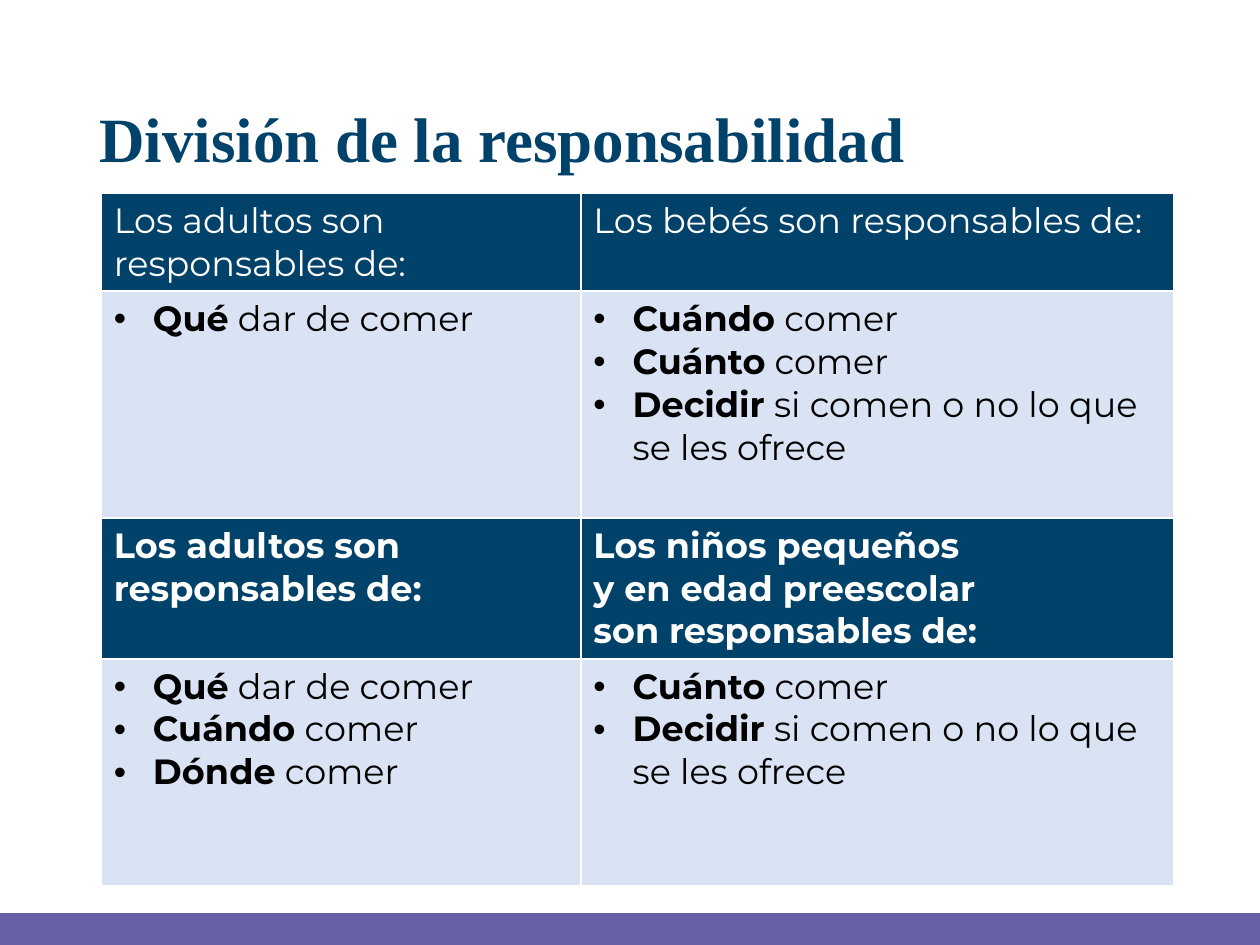
from lxml.etree import SubElement
from pptx import Presentation
from pptx.dml.color import RGBColor
from pptx.enum.shapes import MSO_SHAPE as Shape
from pptx.enum.text import MSO_ANCHOR as Anchor
from pptx.oxml import parse_xml
from pptx.oxml.ns import nsdecls, qn
from pptx.util import Cm, Pt

NAVY = RGBColor(0x00, 0x42, 0x6A)
PALE = RGBColor(0xDA, 0xE3, 0xF3)
PURPLE = RGBColor(0x66, 0x60, 0xA6)
WHITE = RGBColor(0xFF, 0xFF, 0xFF)
BLACK = RGBColor(0x00, 0x00, 0x00)

ADULTS = "Los adultos son\nresponsables de:"
WHAT = ("Qué", " dar de comer")
WHEN = ("Cuándo", " comer")
HOW_MUCH = ("Cuánto", " comer")
WHERE = ("Dónde", " comer")
DECIDE = ("Decidir", " si comen o no lo que se les ofrece")
TODDLERS = "Los niños pequeños\ny en edad preescolar\nson responsables de:"


def add_text(para, text, font="Montserrat", size=20, color=BLACK, bold=False):
    """Add text to a paragraph, with a line break at each newline."""
    for number, line in enumerate(text.split("\n")):
        if number:
            para.add_line_break()
        span = para.add_run()
        span.text = line
        span.font.name = font
        span.font.size = Pt(size)
        span.font.color.rgb = color
        span.font.bold = bold


def add_bullet(para, indent=Cm(0.79)):
    props = para._p.get_or_add_pPr()
    props.set("marL", str(indent))
    props.set("indent", str(-indent))
    SubElement(props, qn("a:buFont")).set("typeface", "Arial")
    SubElement(props, qn("a:buChar")).set("char", "•")


def add_borders(cell, color=WHITE, width=Pt(1)):
    props = cell._tc.get_or_add_tcPr()
    for place, side in enumerate(("lnL", "lnR", "lnT", "lnB")):
        props.insert(place, parse_xml(
            f'<a:{side} {nsdecls("a")} w="{width}"><a:solidFill>'
            f'<a:srgbClr val="{color}"/></a:solidFill></a:{side}>'))


class SlideBuilder:
    def __init__(self, page):
        self.page = page

    def bar(self, left, top, width, height, color):
        shape = self.page.shapes.add_shape(
            Shape.RECTANGLE, Cm(left), Cm(top), Cm(width), Cm(height))
        shape.shadow.inherit = False
        shape.fill.solid()
        shape.fill.fore_color.rgb = color
        shape.line.color.rgb = color
        shape.line.width = Pt(1)

    def title(self, text, left, top, width, height):
        box = self.page.shapes.add_textbox(
            Cm(left), Cm(top), Cm(width), Cm(height))
        frame = box.text_frame
        frame.word_wrap = True
        frame.vertical_anchor = Anchor.MIDDLE
        para = frame.paragraphs[0]
        para.line_spacing = 0.9
        add_text(para, text, font="Times New Roman", size=36, color=NAVY, bold=True)

    def table(self, left, top, widths, heights):
        table = self.page.shapes.add_table(
            len(heights), len(widths), Cm(left), Cm(top),
            Cm(sum(widths)), Cm(sum(heights))).table
        table.first_row = table.horz_banding = False
        for column, width in zip(table.columns, widths):
            column.width = Cm(width)
        for row, height in zip(table.rows, heights):
            row.height = Cm(height)
        return table

    def fill_cell(self, cell, color):
        cell.fill.solid()
        cell.fill.fore_color.rgb = color
        add_borders(cell)

    def header_cell(self, cell, text, bold):
        self.fill_cell(cell, NAVY)
        add_text(cell.text_frame.paragraphs[0], text, color=WHITE, bold=bold)

    def list_cell(self, cell, items):
        """Fill a cell with bullets, each a bold lead and a plain rest."""
        self.fill_cell(cell, PALE)
        frame = cell.text_frame
        for number, (lead, rest) in enumerate(items):
            para = frame.add_paragraph() if number else frame.paragraphs[0]
            add_bullet(para)
            add_text(para, lead, bold=True)
            add_text(para, rest)


def main():
    deck = Presentation()
    deck.slide_width, deck.slide_height = Cm(25.4), Cm(19.05)
    builder = SlideBuilder(deck.slides.add_slide(deck.slide_layouts[6]))

    builder.bar(0, 18.42, 25.4, 0.76, PURPLE)
    builder.title("División de la responsabilidad", 1.75, 1.02, 21.9, 3.68)

    table = builder.table(2.04, 3.89, (9.67, 11.95), (1.98, 4.57, 2.84, 4.57))
    groups = [
        (False, (ADULTS, "Los bebés son responsables de:"),
         ([WHAT], [WHEN, HOW_MUCH, DECIDE])),
        (True, (ADULTS, TODDLERS),
         ([WHAT, WHEN, WHERE], [HOW_MUCH, DECIDE])),
    ]
    for group, (bold, headers, lists) in enumerate(groups):
        for column, (header, items) in enumerate(zip(headers, lists)):
            builder.header_cell(table.cell(2 * group, column), header, bold)
            builder.list_cell(table.cell(2 * group + 1, column), items)

    deck.save("out.pptx")


if __name__ == "__main__":
    main()
